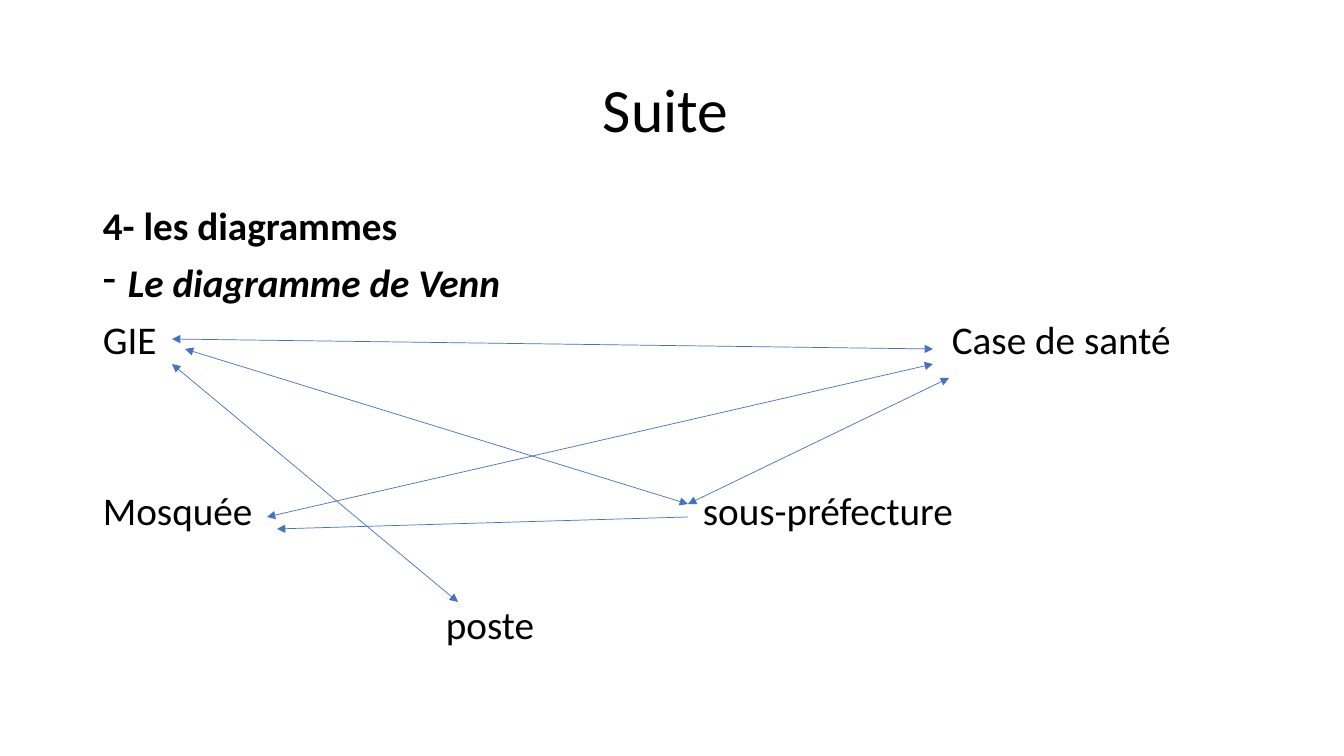
"""Slide showing a Venn diagram of links between village institutions."""
from lxml import etree
from pptx import Presentation
from pptx.dml.color import RGBColor
from pptx.enum.shapes import MSO_CONNECTOR
from pptx.enum.text import MSO_ANCHOR, PP_ALIGN
from pptx.oxml.ns import qn
from pptx.util import Pt

STRAIGHT = MSO_CONNECTOR.STRAIGHT
TOP, MIDDLE = MSO_ANCHOR.TOP, MSO_ANCHOR.MIDDLE
LEFT, CENTER = PP_ALIGN.LEFT, PP_ALIGN.CENTER
COLORS = {"text": "000000", "link": "4472C4", "background": "FFFFFF"}
FONT = "Calibri"
SCALE = 914400 / 100.8
MARGIN, CONTENT_WIDTH = 93, 1159
BODY_TOP, ROW_PITCH, ROW_HEIGHT = 202, 57, 54


def px(length):
    return round(length * SCALE)


def add_text(text, left, top, width, height, size=28, bold=False, italic=False,
             align=LEFT, anchor=TOP, bullet=None):
    box = page.shapes.add_textbox(px(left), px(top), px(width), px(height))
    frame = box.text_frame
    frame.word_wrap = True
    frame.vertical_anchor = anchor
    para = frame.paragraphs[0]
    para.alignment = align
    para.line_spacing = 0.9
    if bullet:
        properties = para._p.get_or_add_pPr()
        properties.set("marL", str(px(25)))
        properties.set("indent", str(-px(25)))
        etree.SubElement(properties, qn("a:buChar")).set("char", bullet)
    span = para.add_run()
    span.text = text
    span.font.name = FONT
    span.font.size = Pt(size)
    span.font.bold = bold
    span.font.italic = italic
    span.font.color.rgb = RGBColor.from_string(COLORS["text"])


deck = Presentation()
deck.slide_width, deck.slide_height = px(1344), px(756)
page = deck.slides.add_slide(deck.slide_layouts[6])
page.background.fill.solid()
page.background.fill.fore_color.rgb = RGBColor.from_string(COLORS["background"])

add_text("Suite ", MARGIN, 40, CONTENT_WIDTH, 146, size=44, align=CENTER, anchor=MIDDLE)

rows = [
    ("4- les diagrammes", MARGIN, 0, CONTENT_WIDTH, {"bold": True}),
    ("Le diagramme de Venn", MARGIN, 1, CONTENT_WIDTH,
     {"bold": True, "italic": True, "bullet": "-"}),
    ("GIE", MARGIN, 2, 90, {}),
    ("Case de santé", 942, 2, 310, {}),
    ("Mosquée", MARGIN, 5, 190, {}),
    ("sous-préfecture", 693, 5, 310, {}),
    ("poste", 436, 7, 140, {}),
]
for text, left, row, width, style in rows:
    add_text(text, left, BODY_TOP + row * ROW_PITCH, width, ROW_HEIGHT, **style)

BOTH_ENDS, END_ONLY = ("headEnd", "tailEnd"), ("tailEnd",)
links = [
    ((172, 339), (933, 349), BOTH_ENDS),
    ((172, 364), (458, 602), BOTH_ENDS),
    ((185, 349), (688, 504), BOTH_ENDS),
    ((267, 517), (933, 364), BOTH_ENDS),
    ((688, 504), (949, 378), BOTH_ENDS),
    ((688, 517), (277, 529), END_ONLY),
]
for start, end, arrowheads in links:
    link = page.shapes.add_connector(STRAIGHT, *map(px, start + end))
    link.line.width = Pt(0.5)
    link.line.color.rgb = RGBColor.from_string(COLORS["link"])
    outline = link.line._get_or_add_ln()
    for arrowhead in arrowheads:
        etree.SubElement(outline, qn(f"a:{arrowhead}")).set("type", "triangle")
    etree.SubElement(link._element.spPr, qn("a:effectLst"))

deck.save("out.pptx")
